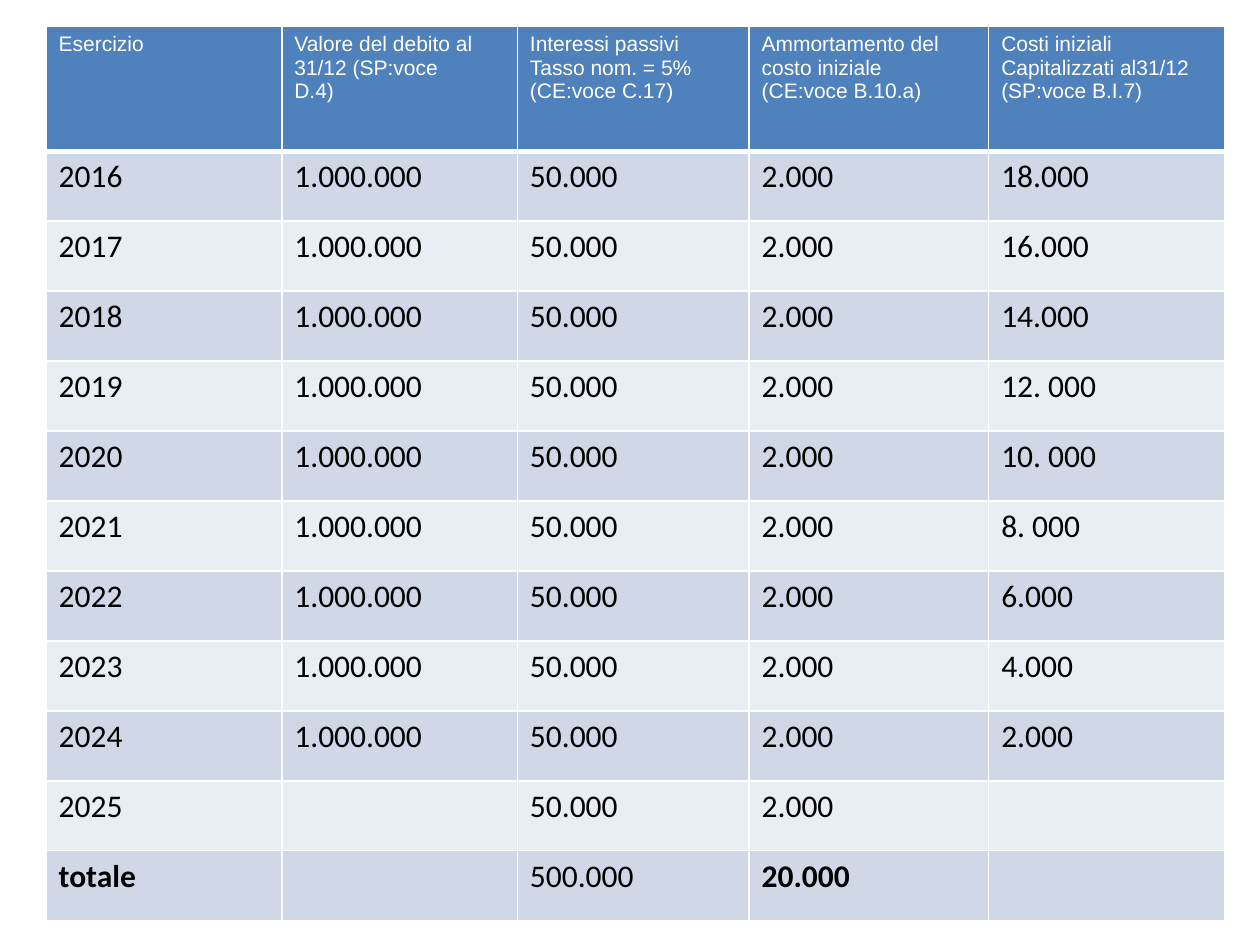
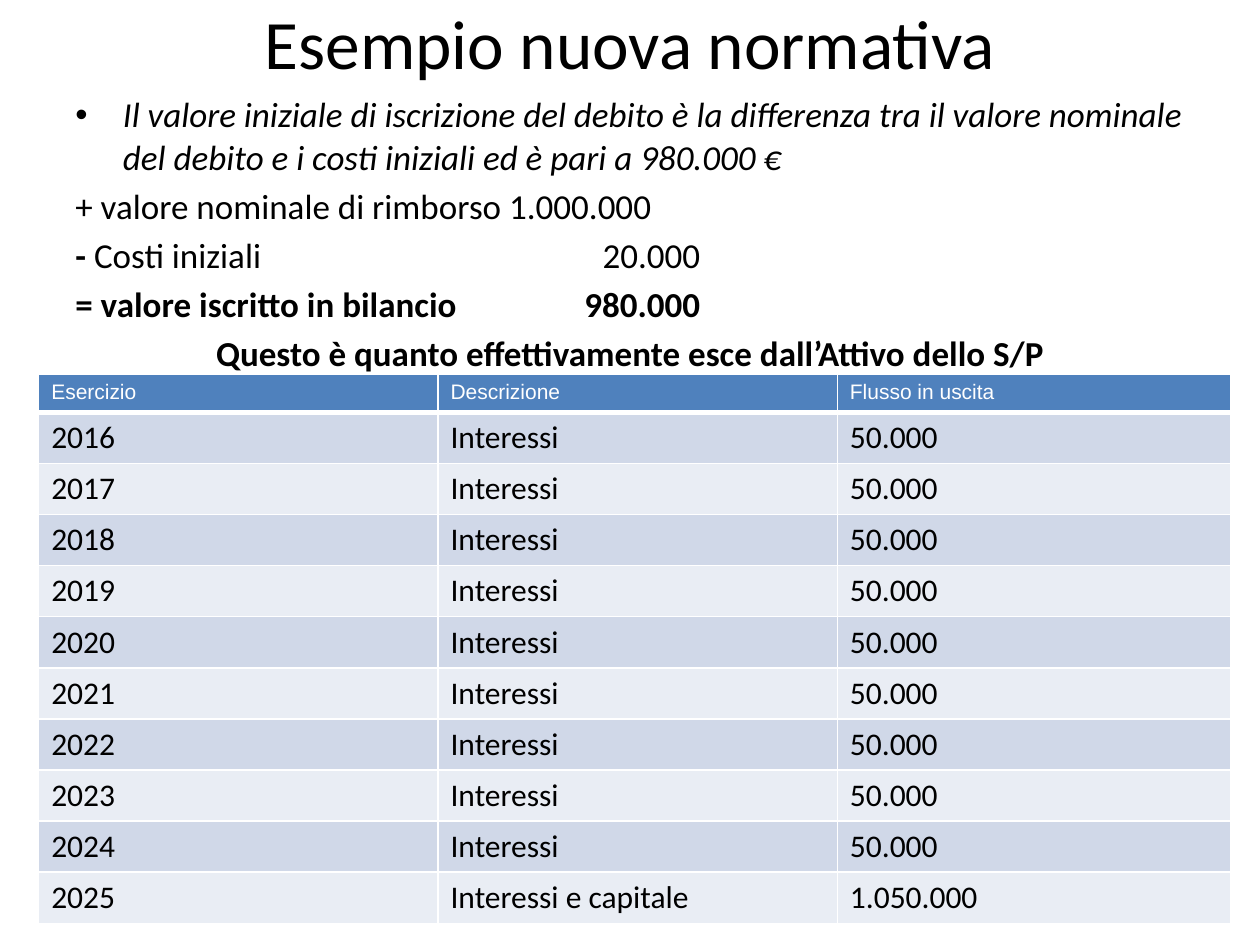
from lxml import etree
from pptx import Presentation
from pptx.dml.color import RGBColor
from pptx.enum.text import MSO_ANCHOR, PP_ALIGN
from pptx.oxml.ns import qn
from pptx.util import Cm, Pt

LEFT, CENTER = PP_ALIGN.LEFT, PP_ALIGN.CENTER
TOP, MIDDLE = MSO_ANCHOR.TOP, MSO_ANCHOR.MIDDLE

HUES = {"ink": "000000", "paper": "FFFFFF", "head": "4F81BD",
        "odd": "D0D8E8", "even": "E9EDF4"}
PLAIN = {"bold": False, "italic": False}
TITLE = {**PLAIN, "name": "Calibri", "size": Pt(39.6), "hue": "ink"}
BODY = {**TITLE, "size": Pt(20)}
HEAD = {**PLAIN, "name": "Arial", "size": Pt(12), "hue": "paper"}
CELL = {**TITLE, "size": Pt(18)}
STRONG = {"bold": True}

YEARS = [str(year) for year in range(2016, 2026)]
COSTS = ["18.000", "16.000", "14.000", "12. 000", "10. 000",
         "8. 000", "6.000", "4.000", "2.000", ""]
DEBT_HEADS = ["Esercizio",
              "Valore del debito al 31/12 (SP:voce\nD.4)",
              "Interessi passivi\nTasso nom. = 5%\n(CE:voce C.17)",
              "Ammortamento del costo iniziale\n(CE:voce B.10.a)",
              "Costi iniziali\nCapitalizzati al31/12\n(SP:voce B.I.7)"]
FLOW_HEADS = ["Esercizio", "Descrizione", "Flusso in uscita"]


def tint(name):
    """Return the named colour."""
    return RGBColor.from_string(HUES[name])


def write(para, text, style):
    """Add a run with the given format values."""
    run = para.add_run()
    run.text = text
    for key, value in style.items():
        if key == "hue":
            run.font.color.rgb = tint(value)
        else:
            setattr(run.font, key, value)


def extend(para, tag, **values):
    """Append an element to the paragraph properties."""
    props = para._p.get_or_add_pPr()
    return etree.SubElement(props, qn(tag), values)


def bullet(para, indent):
    """Give a paragraph a hanging round bullet."""
    props = para._p.get_or_add_pPr()
    props.set("marL", str(indent))
    props.set("indent", str(-indent))
    extend(para, "a:buFont", typeface="Arial")
    extend(para, "a:buChar", char="•")


def stop(para, place):
    """Set a right tab for an amount."""
    tabs = extend(para, "a:tabLst")
    etree.SubElement(tabs, qn("a:tab"), pos=str(place), algn="r")


def add_box(slide, left, top, width, height, anchor):
    """Add a wrapping text box and return its frame."""
    box = slide.shapes.add_textbox(Cm(left), Cm(top), Cm(width), Cm(height))
    frame = box.text_frame
    for key, value in {"word_wrap": True, "vertical_anchor": anchor}.items():
        setattr(frame, key, value)
    return frame


def edge(cell, base):
    """Draw white borders, with the bottom one of the given width."""
    props = cell._tc.get_or_add_tcPr()
    for side, width in zip("LRTB", (1, 1, 1, base)):
        line = etree.SubElement(props, qn(f"a:ln{side}"), w=str(Pt(width)))
        fill = etree.SubElement(line, qn("a:solidFill"))
        etree.SubElement(fill, qn("a:srgbClr"), val=HUES["paper"])


def fill_cell(cell, text, row, style):
    """Write, border and colour one table cell."""
    edge(cell, 1 if row else 3)
    cell.fill.solid()
    cell.fill.fore_color.rgb = tint(("even" if row % 2 == 0 else "odd") if row else "head")
    for index, line in enumerate(text.split("\n") if text else []):
        frame = cell.text_frame
        para = frame.add_paragraph() if index else frame.paragraphs[0]
        write(para, line, style)


def add_grid(slide, left, top, widths, heights, rows, strong=()):
    """Add a banded table with a header row."""
    shape = slide.shapes.add_table(len(rows), len(widths), Cm(left), Cm(top),
                                   Cm(sum(widths)), Cm(sum(heights)))
    grid = shape.table
    for column, width in zip(grid.columns, widths):
        column.width = Cm(width)
    for line, height in zip(grid.rows, heights):
        line.height = Cm(height)
    for row, texts in enumerate(rows):
        for col, text in enumerate(texts):
            style = CELL if row else HEAD
            if (row, col) in strong:
                style = {**style, **STRONG}
            fill_cell(grid.cell(row, col), text, row, style)


def add_debt(slide):
    """Show the debt schedule with its totals."""
    rows = [[year, "1.000.000" if cost else "", "50.000", "2.000", cost]
            for year, cost in zip(YEARS, COSTS)]
    total = ["totale", "", "500.000", "20.000", ""]
    add_grid(slide, 0.93, 0.53, [4.75, 4.75, 4.67, 4.83, 4.75],
             [2.52] + [1.41] * 11, [DEBT_HEADS, *rows, total],
             strong={(11, 0), (11, 3)})


def add_notes(slide):
    """Show the title and the sums for the opening value."""
    title = add_box(slide, 1.27, 0, 22.86, 1.68, MIDDLE).paragraphs[0]
    title.alignment = CENTER
    write(title, "Esempio nuova normativa", TITLE)

    bold = {**BODY, **STRONG}
    lines = [
        [("Il valore iniziale di iscrizione del debito è la differenza tra il "
          "valore nominale del debito e i costi iniziali ed è pari a 980.000 €",
          {**BODY, "italic": True})],
        [("+ valore nominale di rimborso 1.000.000", BODY)],
        [("- ", bold), ("Costi iniziali\t20.000", BODY)],
        [("= valore iscritto in bilancio\t980.000", bold)],
        [("Questo è quanto effettivamente esce dall’Attivo dello S/P", bold)],
    ]
    frame = add_box(slide, 1.27, 1.75, 22.86, 5.94, TOP)
    for index, parts in enumerate(lines):
        para = frame.add_paragraph() if index else frame.paragraphs[0]
        para.alignment = CENTER if index == len(lines) - 1 else LEFT
        if index:
            para.space_before = Pt(4)
        else:
            bullet(para, Cm(0.96))
        if "\t" in parts[-1][0]:
            stop(para, Cm(12.6))
        for text, style in parts:
            write(para, text, style)


def add_flows(slide):
    """Show the yearly cash outflows."""
    rows = [[year, "Interessi", "50.000"] for year in YEARS[:-1]]
    last = [YEARS[-1], "Interessi e capitale", "1.050.000"]
    add_grid(slide, 0.78, 7.55, [8.05, 8.05, 7.93],
             [0.7] + [1.03] * 10, [FLOW_HEADS, *rows, last])


def main():
    """Build and save both slides."""
    deck = Presentation()
    deck.slide_width, deck.slide_height = Cm(25.4), Cm(19.05)
    blank = deck.slide_layouts[6]
    add_debt(deck.slides.add_slide(blank))
    sample = deck.slides.add_slide(blank)
    add_notes(sample)
    add_flows(sample)
    deck.save("out.pptx")


if __name__ == "__main__":
    main()
